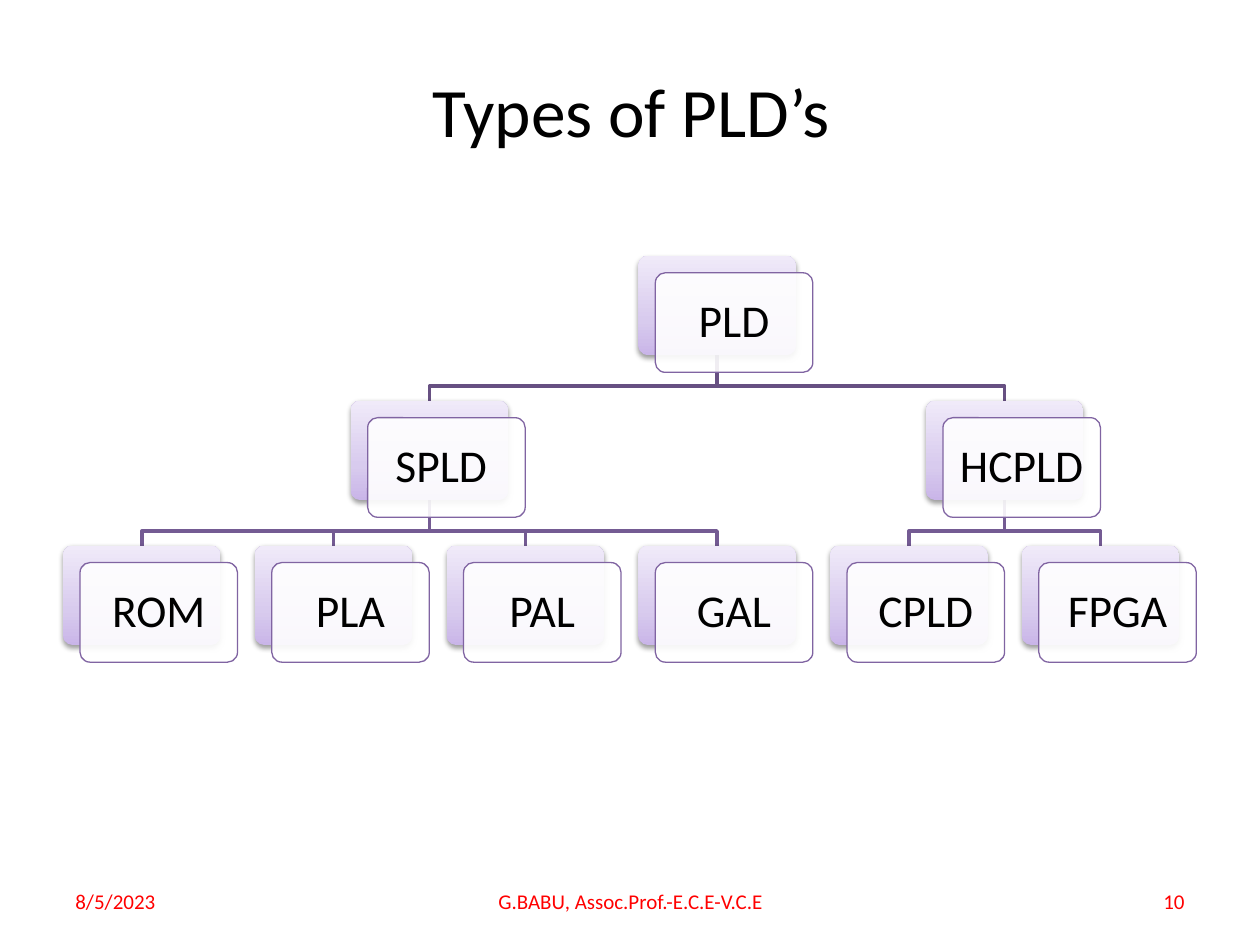
import pptx
import pptx.util
from lxml import etree
from pptx.dml.color import RGBColor
from pptx.enum.shapes import MSO_SHAPE
from pptx.enum.text import MSO_ANCHOR, MSO_AUTO_SIZE, PP_ALIGN
from pptx.oxml import parse_xml
from pptx.util import Inches, Pt

# Content
TITLE = "Types of PLD’s"
TREE = ("PLD", [
    ("SPLD ", [("ROM", []), ("PLA", []), ("PAL", []), ("GAL", [])]),
    ("HCPLD", [("CPLD", []), ("FPGA", [])]),
])
FOOTER = [  # text, left, width, alignment
    ("8/5/2023", 0.5, 2.33, PP_ALIGN.LEFT),
    ("10", 7.17, 2.33, PP_ALIGN.RIGHT),
    ("G.BABU, Assoc.Prof.-E.C.E-V.C.E", 3.42, 3.17, PP_ALIGN.CENTER),
]

# Style
FONT = "Calibri"
BLACK = RGBColor(0x00, 0x00, 0x00)
WHITE = RGBColor(0xFF, 0xFF, 0xFF)
RED = RGBColor(0xFF, 0x00, 0x00)
PURPLE = RGBColor(0x80, 0x64, 0xA2)
BRANCH_COLORS = [RGBColor(0x67, 0x50, 0x82), RGBColor(0x74, 0x5B, 0x93)]  # by level
GRADIENT_STOPS = [
    (0, RGBColor(0xC9, 0xB5, 0xE8)),
    (35, RGBColor(0xD8, 0xCB, 0xEE)),
    (100, RGBColor(0xF0, 0xEA, 0xF9)),
]
NS = 'xmlns:a="http://schemas.openxmlformats.org/drawingml/2006/main"'

# Tree grid, in inches
TREE_LEFT, TREE_TOP = 0.5, 2.03
COLUMN_STEP, ROW_STEP = 1.522, 1.15
NODE_W, NODE_H = 1.25, 0.79
CARD_SHIFT = 0.135
BUS_DROP = 0.245


def write(frame, text, size, color, align, spacing=None):
    paragraph = frame.paragraphs[0]
    paragraph.alignment = align
    if spacing:
        paragraph.line_spacing = spacing
    run = paragraph.add_run()
    run.text = text
    run.font.name = FONT
    run.font.size = Pt(size)
    run.font.color.rgb = color


def place_tree(node, level=0, first_column=0):
    """Give each leaf a column and centre each parent over its children."""
    label, branches = node
    children, next_column = [], first_column
    for branch in branches:
        child, next_column = place_tree(branch, level + 1, next_column)
        children.append(child)
    if children:
        column = (children[0]["column"] + children[-1]["column"]) / 2
    else:
        column, next_column = first_column, first_column + 1
    placed = {"label": label, "column": column, "children": children, "level": level,
              "left": TREE_LEFT + column * COLUMN_STEP,
              "top": TREE_TOP + level * ROW_STEP}
    return placed, next_column


def walk(node):
    yield node
    for child in node["children"]:
        yield from walk(child)


def draw_branch(shapes, parent, child):
    start_x, end_x = (node["left"] + NODE_W / 2 for node in (parent, child))
    start_y = parent["top"] + NODE_H
    bus_y = start_y + BUS_DROP
    builder = shapes.build_freeform(Inches(start_x), Inches(start_y))
    builder.add_line_segments(
        [(Inches(x), Inches(y)) for x, y in
         [(start_x, bus_y), (end_x, bus_y), (end_x, child["top"])]], close=False)
    branch = builder.convert_to_shape()
    branch.shadow.inherit = False
    branch.fill.background()
    branch.line.color.rgb = BRANCH_COLORS[parent["level"]]
    branch.line.width = Pt(2)


def add_rounded(shapes, left, top):
    box = shapes.add_shape(MSO_SHAPE.ROUNDED_RECTANGLE, Inches(left), Inches(top),
                           Inches(NODE_W), Inches(NODE_H))
    box.adjustments[0] = 0.1
    box.shadow.inherit = False
    return box


def draw_node(shapes, node):
    # Gradient backing with a soft shadow
    backing = add_rounded(shapes, node["left"], node["top"])
    backing.line.fill.background()
    backing.fill.background()
    stops = "".join(f'<a:gs pos="{pos * 1000}"><a:srgbClr val="{color}"/></a:gs>'
                    for pos, color in GRADIENT_STOPS)
    gradient = parse_xml(f'<a:gradFill {NS} rotWithShape="1"><a:gsLst>{stops}</a:gsLst>'
                         '<a:lin ang="16200000" scaled="0"/></a:gradFill>')
    properties = backing.element.spPr
    properties.replace(properties.find("{*}noFill"), gradient)
    properties.find("{*}effectLst").append(parse_xml(
        f'<a:outerShdw {NS} blurRad="{Pt(3.1)}" dist="{Pt(1.6)}" dir="5400000" '
        'rotWithShape="0"><a:srgbClr val="000000"><a:alpha val="38000"/>'
        '</a:srgbClr></a:outerShdw>'))

    # Translucent card with the label
    card = add_rounded(shapes, node["left"] + CARD_SHIFT, node["top"] + CARD_SHIFT)
    card.fill.solid()
    card.fill.fore_color.rgb = WHITE
    color = card.element.spPr.find("{*}solidFill/{*}srgbClr")
    etree.SubElement(color, pptx.oxml.ns.qn("a:alpha"), val="90000")
    card.line.color.rgb = PURPLE
    card.line.width = Pt(0.75)
    frame = card.text_frame
    frame.word_wrap = True
    frame.vertical_anchor = MSO_ANCHOR.MIDDLE
    frame.margin_left = frame.margin_right = Inches(0.11)
    frame.margin_top = frame.margin_bottom = Inches(0.11)
    write(frame, node["label"], 26, BLACK, PP_ALIGN.CENTER, 0.9)


def main():
    deck = pptx.Presentation()
    deck.slide_width, deck.slide_height = Inches(10), Inches(7.5)
    slide = deck.slides.add_slide(deck.slide_layouts[5])
    shapes = slide.shapes

    # Title
    title = shapes.title
    title.left, title.top = Inches(0.51), Inches(0.58)
    title.width, title.height = Inches(9), Inches(1.25)
    title.text_frame.auto_size = MSO_AUTO_SIZE.NONE
    title.text_frame.vertical_anchor = MSO_ANCHOR.TOP
    title.text_frame.margin_top = Inches(0.09)
    write(title.text_frame, TITLE, 39.6, BLACK, PP_ALIGN.CENTER, 0.8)

    # Tree: branches behind the nodes
    root, _ = place_tree(TREE)
    for parent in walk(root):
        for child in parent["children"]:
            draw_branch(shapes, parent, child)
    for node in walk(root):
        draw_node(shapes, node)

    # Footer
    for text, left, width, align in FOOTER:
        footer = shapes.add_textbox(Inches(left), Inches(6.95), Inches(width), Inches(0.4))
        footer.text_frame.word_wrap = True
        footer.text_frame.vertical_anchor = MSO_ANCHOR.MIDDLE
        write(footer.text_frame, text, 12, RED, align)

    deck.save("out.pptx")


if __name__ == "__main__":
    main()
